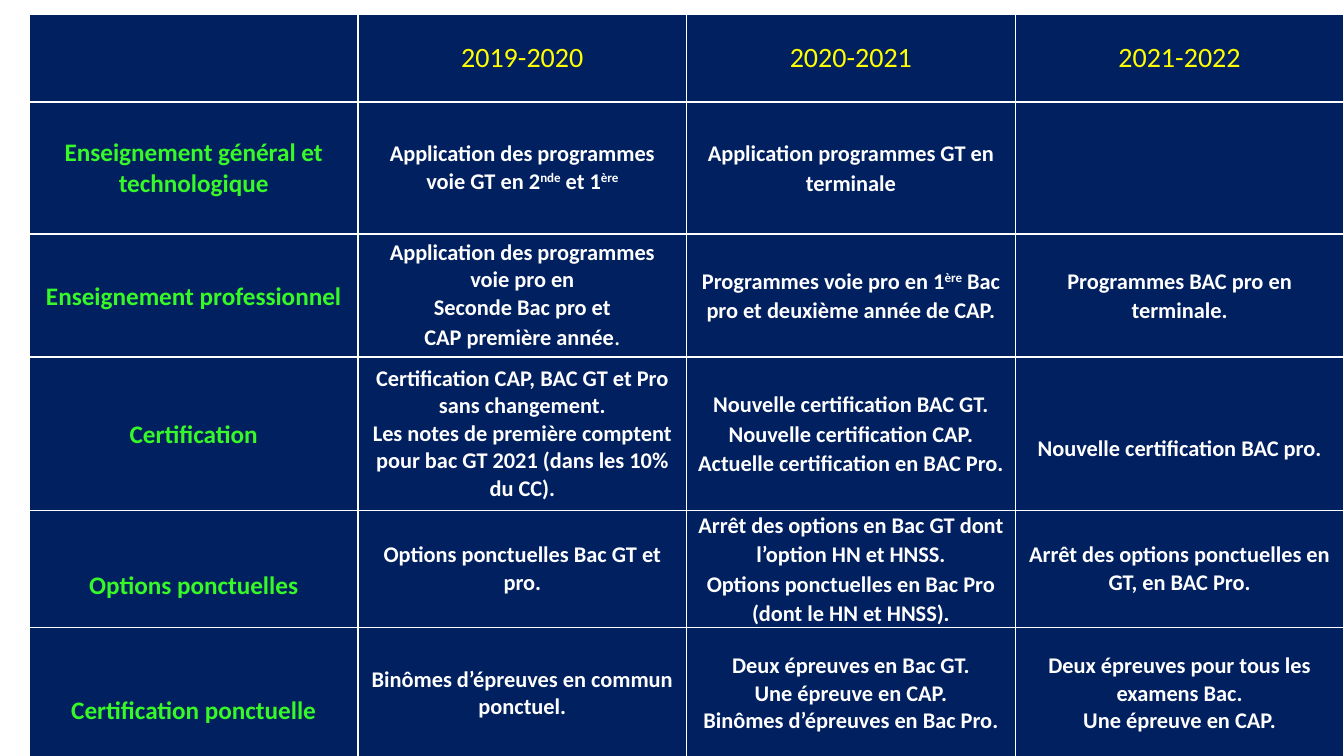
from lxml import etree
from pptx import Presentation
from pptx.dml.color import RGBColor
from pptx.enum.text import MSO_ANCHOR, PP_ALIGN
from pptx.oxml.ns import qn
from pptx.util import Pt

CENTER = PP_ALIGN.CENTER
MIDDLE = MSO_ANCHOR.MIDDLE
NAVY = RGBColor(0x00, 0x20, 0x60)
WHITE = RGBColor(0xFF, 0xFF, 0xFF)
YELLOW = RGBColor(0xFF, 0xFF, 0x00)
GREEN = RGBColor(0x36, 0xF9, 0x27)

FONT = "Calibri"
ROW_HEIGHTS = [62.6, 94.3, 87.1, 109.4, 67.7, 94.3]
SUP = {"baseline": "30000"}
HEAD = {"size": 20, "color": YELLOW, "bold": False}
LABEL = {"size": 18, "color": GREEN}
TIGHT = {"tight": True}
TIGHT_LABEL = LABEL | TIGHT

# Each cell: its paragraphs, then its format. A paragraph is a text or a list of (text, format) runs.
SCHEDULE = [
    [
        ([], {}),
        (["2019-2020"], HEAD),
        (["2020-2021"], HEAD),
        (["2021-2022"], HEAD),
    ],
    [
        (["Enseignement général et technologique"], LABEL),
        ([[("Application des programmes voie GT en 2", {}), ("nde", SUP),
           (" et 1", {}), ("ère", SUP)]], {}),
        (["Application programmes GT en terminale"], TIGHT),
        ([], {}),
    ],
    [
        (["Enseignement professionnel"], TIGHT_LABEL),
        (["Application des programmes voie pro en", "Seconde Bac pro et",
          [("CAP première année", {}), (".", {"size": 18, "bold": False})]], {}),
        ([[("Programmes voie pro en 1", {}), ("ère", SUP),
           (" Bac pro et deuxième année de CAP.", {})]], TIGHT),
        (["Programmes BAC pro en terminale."], TIGHT),
    ],
    [
        (["Certification"], TIGHT_LABEL),
        (["Certification CAP, BAC GT et Pro sans changement.",
          "Les notes de première comptent pour bac GT 2021 (dans les 10% du CC)."], {}),
        (["Nouvelle certification BAC GT.", "Nouvelle certification CAP.",
          "Actuelle certification en BAC Pro."], TIGHT | {"first_indent": -18}),
        (["Nouvelle certification BAC pro."], TIGHT | {"top": 21}),
    ],
    [
        (["Options ponctuelles"], TIGHT_LABEL | {"top": 23.5}),
        (["Options ponctuelles Bac GT et pro."], {}),
        (["Arrêt des options en Bac GT dont l’option HN et HNSS.",
          "Options ponctuelles en Bac Pro (dont le HN et HNSS)."], TIGHT),
        (["Arrêt des options ponctuelles en GT, en BAC Pro."], {}),
    ],
    [
        (["Certification ponctuelle"], TIGHT_LABEL | {"top": 23.5}),
        (["Binômes d’épreuves en commun ponctuel."], {}),
        (["Deux épreuves en Bac GT.", "Une épreuve en CAP.",
          "Binômes d’épreuves en Bac Pro."], {}),
        (["Deux épreuves pour tous les examens Bac.", "Une épreuve en CAP."], {}),
    ],
]


def add_run(p, text, size=16, color=WHITE, bold=True, baseline=None):
    r = p.add_run()
    r.text = text
    r.font.name = FONT
    r.font.size = Pt(size)
    r.font.bold = bold
    r.font.color.rgb = color
    if baseline:
        r.font._element.set("baseline", baseline)


def set_borders(cell):
    tc_pr = cell._tc.get_or_add_tcPr()
    for i, side in enumerate(("lnL", "lnR", "lnT", "lnB")):
        ln = etree.Element(qn(f"a:{side}"), w=str(Pt(1)))
        fill = etree.SubElement(ln, qn("a:solidFill"))
        etree.SubElement(fill, qn("a:srgbClr"), val=str(WHITE))
        tc_pr.insert(i, ln)


def fill_cell(cell, paragraphs, tight=False, top=0, first_indent=0, **font):
    """Write one cell; tight cells have narrow margins and looser lines."""
    cell.fill.solid()
    cell.fill.fore_color.rgb = NAVY
    set_borders(cell)
    cell.vertical_anchor = MIDDLE
    if tight:
        cell.margin_left = cell.margin_right = Pt(5)
        cell.margin_top, cell.margin_bottom = Pt(top), Pt(0)
    tf = cell.text_frame
    for i, paragraph in enumerate(paragraphs):
        p = tf.add_paragraph() if i else tf.paragraphs[0]
        p.alignment = CENTER
        if tight:
            p.line_spacing = 1.07
        if first_indent and i == 0:
            p._p.get_or_add_pPr().set("indent", str(Pt(first_indent)))
        runs = [(paragraph, {})] if isinstance(paragraph, str) else paragraph
        for text, run_font in runs:
            add_run(p, text, **(font | run_font))


def add_schedule(s, left, top, width):
    columns = len(SCHEDULE[0])
    table = s.shapes.add_table(len(SCHEDULE), columns, Pt(left), Pt(top),
                               Pt(width), Pt(sum(ROW_HEIGHTS))).table
    table.horz_banding = False
    for column in table.columns:
        column.width = Pt(width / columns)
    for row, height, contents in zip(table.rows, ROW_HEIGHTS, SCHEDULE):
        row.height = Pt(height)
        for cell, (paragraphs, style) in zip(row.cells, contents):
            fill_cell(cell, paragraphs, **style)


def main():
    prs = Presentation()
    prs.slide_width, prs.slide_height = Pt(960), Pt(540)
    s = prs.slides.add_slide(prs.slide_layouts[6])
    add_schedule(s, 21, 10.3, 939)
    prs.save("out.pptx")


if __name__ == "__main__":
    main()
